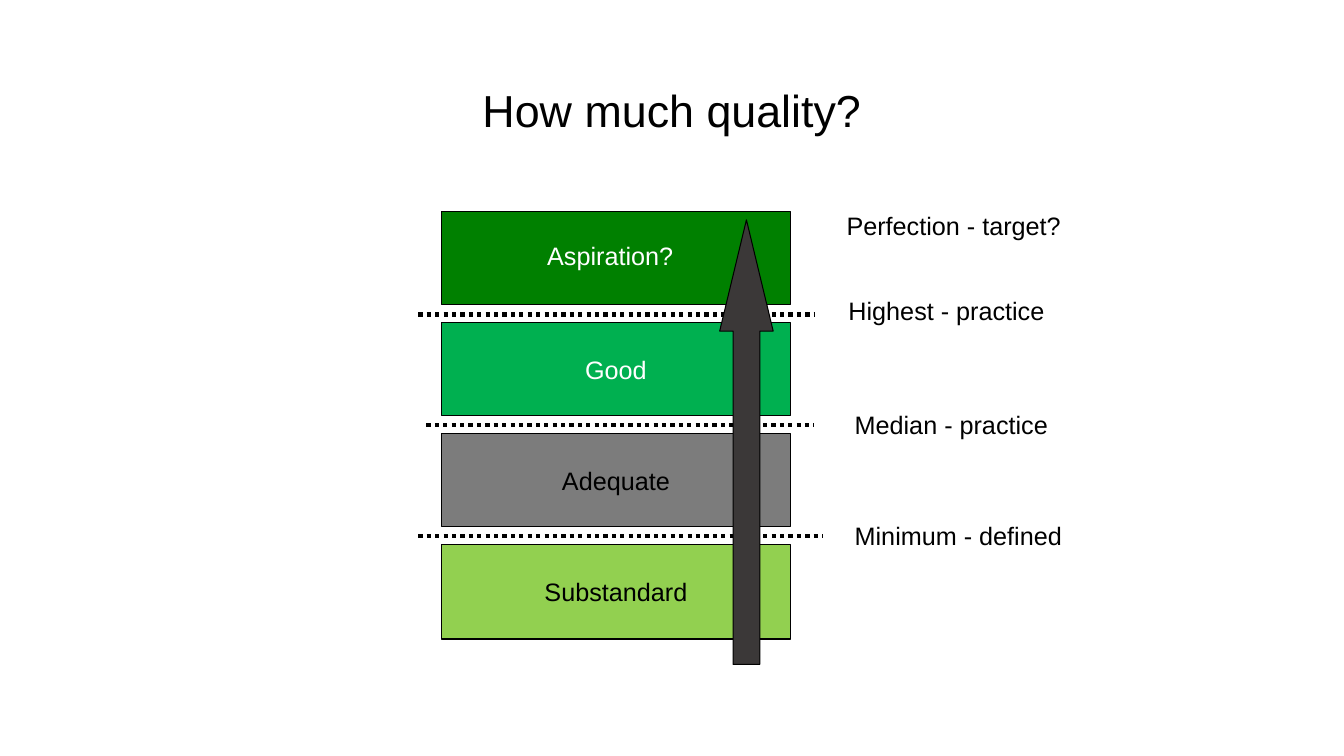
"""Build the "How much quality?" slide: four stacked levels with their thresholds."""
from lxml import etree
from pptx import Presentation
from pptx.dml.color import RGBColor
from pptx.enum.dml import MSO_LINE
from pptx.enum.shapes import MSO_CONNECTOR, MSO_SHAPE
from pptx.enum.text import MSO_ANCHOR, MSO_AUTO_SIZE, PP_ALIGN
from pptx.oxml.ns import qn
from pptx.util import Pt

BLACK = RGBColor(0x00, 0x00, 0x00)
WHITE = RGBColor(0xFF, 0xFF, 0xFF)
DARK_GREEN = RGBColor(0x00, 0x80, 0x00)
GREEN = RGBColor(0x00, 0xB0, 0x50)
GRAY = RGBColor(0x7C, 0x7C, 0x7C)
LIME = RGBColor(0x92, 0xD0, 0x50)
CHARCOAL = RGBColor(0x3B, 0x38, 0x38)
RECT, UP_ARROW = MSO_SHAPE.RECTANGLE, MSO_SHAPE.UP_ARROW
STRAIGHT, DOTS = MSO_CONNECTOR.STRAIGHT, MSO_LINE.ROUND_DOT
MIDDLE, CENTER, LEFT = MSO_ANCHOR.MIDDLE, PP_ALIGN.CENTER, PP_ALIGN.LEFT
FIT_SHAPE = MSO_AUTO_SIZE.SHAPE_TO_FIT_TEXT
FONT = "Arial"

TITLE = "How much quality?"
LEVELS = [
    ("", DARK_GREEN, WHITE, 66.5),
    ("Good", GREEN, WHITE, 66.5),
    ("Adequate", GRAY, BLACK, 66.5),
    ("Substandard", LIME, BLACK, 67.7),
]
THRESHOLDS = [(298.8, 581.8), (304.6, 581.8), (298.8, 587.5)]
LABELS = [
    ("Perfection - target?", 597.6, 146.9, 169.2, BLACK),
    ("Highest - practice", 599, 207.4, 155.5, BLACK),
    ("Median - practice", 603.4, 288.7, 159.1, BLACK),
    ("Minimum - defined", 603.4, 367.9, 164.2, BLACK),
    ("Aspiration?", 383.8, 167.8, 105.1, WHITE),
]
STACK_LEFT, STACK_TOP, STACK_WIDTH, PITCH = 315.4, 151.2, 249.1, 79.2
FIRST_THRESHOLD = 224.6


def write(tf, text, size, color, align):
    """Put one formatted paragraph in a text frame."""
    tf.text = text
    p = tf.paragraphs[0]
    p.alignment = align
    for r in p.runs:
        r.font.name, r.font.size, r.font.color.rgb = FONT, Pt(size), color


def add_block(slide, kind, box, fill):
    """Add a filled shape with a thin black outline."""
    sp = slide.shapes.add_shape(kind, *map(Pt, box))
    sp.shadow.inherit = False
    sp.fill.solid()
    sp.fill.fore_color.rgb = fill
    sp.line.color.rgb = BLACK
    sp.line.width = Pt(0.75)
    return sp


def add_threshold(slide, left, right, y):
    """Add a dotted horizontal line."""
    line = slide.shapes.add_connector(STRAIGHT, Pt(left), Pt(y), Pt(right), Pt(y))
    line.line.color.rgb = BLACK
    line.line.width = Pt(3)
    line.line.dash_style = DOTS
    etree.SubElement(line._element.spPr, qn("a:effectLst"))


def add_label(slide, text, left, top, width, color):
    """Add a one-line text box."""
    tf = slide.shapes.add_textbox(Pt(left), Pt(top), Pt(width), Pt(29)).text_frame
    tf.word_wrap = False
    tf.auto_size = FIT_SHAPE
    write(tf, text, 18, color, LEFT)


def main():
    """Build and save the slide."""
    prs = Presentation()
    prs.slide_width, prs.slide_height = Pt(960), Pt(540)
    slide = prs.slides.add_slide(prs.slide_layouts[5])

    title = slide.shapes.title
    title.left, title.top, title.width, title.height = map(Pt, (66, 28.8, 828, 104.4))
    title.text_frame.vertical_anchor = MIDDLE
    write(title.text_frame, TITLE, 32, BLACK, CENTER)
    title.text_frame.paragraphs[0].line_spacing = 0.9

    for i, (left, right) in enumerate(THRESHOLDS):
        add_threshold(slide, left, right, FIRST_THRESHOLD + i * PITCH)

    for i, (name, fill, color, height) in enumerate(LEVELS):
        box = (STACK_LEFT, STACK_TOP + i * PITCH, STACK_WIDTH, height)
        tf = add_block(slide, RECT, box, fill).text_frame
        tf.word_wrap = False
        tf.vertical_anchor = MIDDLE
        if name:
            write(tf, name, 18, color, CENTER)

    for label in LABELS:
        add_label(slide, *label)

    arrow = add_block(slide, UP_ARROW, (514.1, 157, 38.2, 317.5), CHARCOAL)
    arrow.adjustments[0], arrow.adjustments[1] = 0.5, 2.08

    prs.save("out.pptx")


if __name__ == "__main__":
    main()
